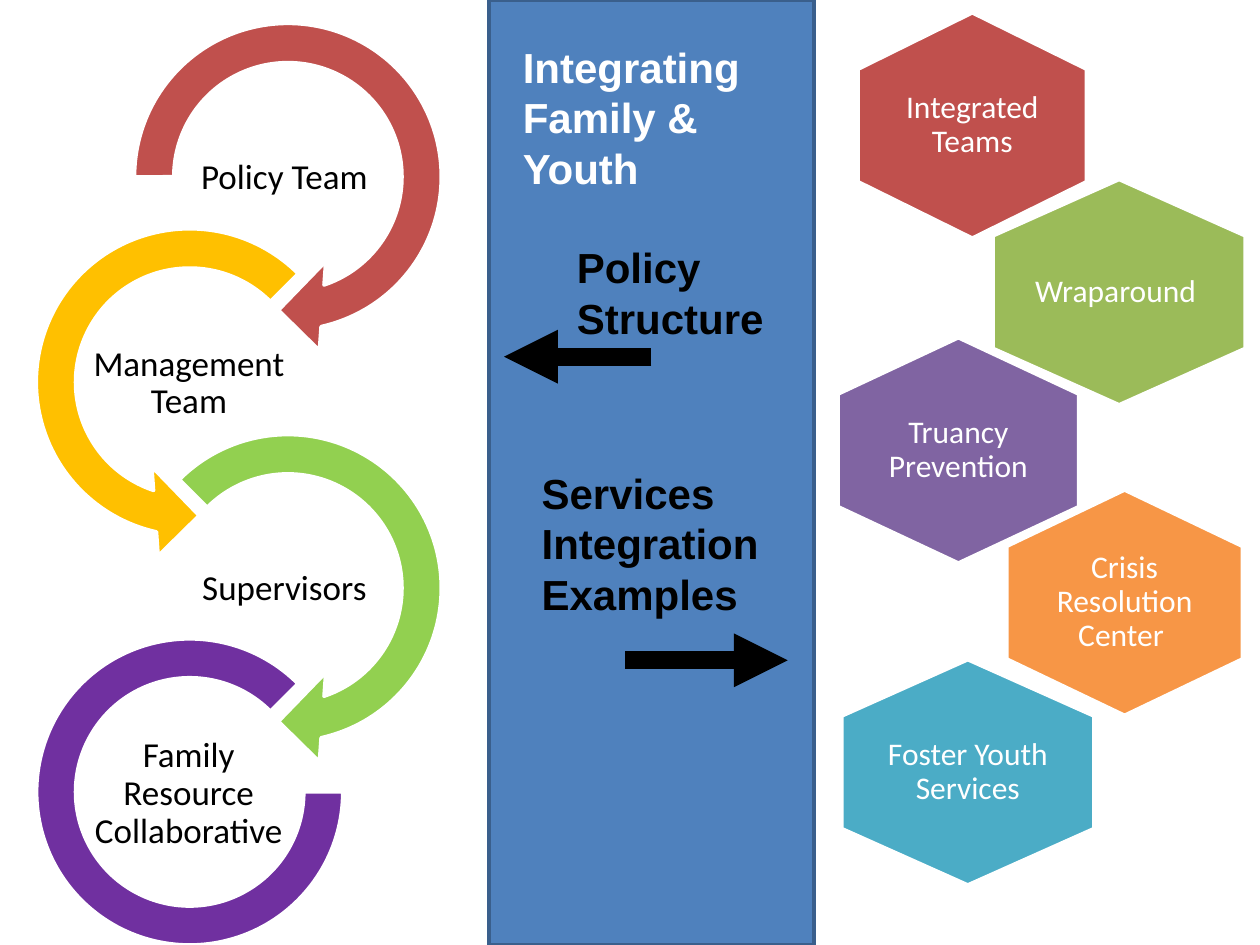
"""Build the slide linking policy structure with service integration examples."""
from lxml import etree
from pptx import Presentation, util as u
from pptx.dml import color
from pptx.enum import shapes, text
from pptx.oxml import ns

Cm, Pt, RGB = u.Cm, u.Pt, color.RGBColor.from_string
M = shapes.MSO_SHAPE
C = {"red": "C0504D", "gold": "FFC000", "lime": "92D050", "violet": "7030A0",
     "blue": "4F81BD", "navy": "3A5F8C", "green": "9BBB59", "purple": "8064A2",
     "teal": "4BACC6", "orange": "F79646", "white": "FFFFFF", "black": "000000"}
LABEL = {"alignment": text.PP_ALIGN.CENTER, "line_spacing": 0.9}


def add_block(parent, kind, box, fill, line="white"):
    s = parent.add_shape(kind, *[Cm(v) for v in box])
    s.shadow.inherit = False
    s.fill.solid()
    s.fill.fore_color.rgb = RGB(C[fill])
    s.line.color.rgb = RGB(C[line])
    s.line.width = Pt(2)
    return s


def add_text(parent, lines, box, font, ink, frame, para):
    s = parent.add_textbox(*[Cm(v) for v in box])
    tf = s.text_frame
    for k, v in {"word_wrap": True, **frame}.items():
        setattr(tf, k, v)
    for i, line in enumerate(lines):
        p = tf.add_paragraph() if i else tf.paragraphs[0]
        for k, v in para.items():
            setattr(p, k, v)
        r = p.add_run()
        r.text = line
        for k, v in font.items():
            setattr(r.font, k, v)
        r.font.color.rgb = RGB(C[ink])


prs = Presentation()
prs.slide_width, prs.slide_height = Cm(25.4), Cm(19.05)
sp = prs.slides.add_slide(prs.slide_layouts[6]).shapes

margins = ("margin_left", "margin_top", "margin_right", "margin_bottom")
middle = {"vertical_anchor": text.MSO_ANCHOR.MIDDLE}

teams = [
    ("Policy Team ", M.CIRCULAR_ARROW, "red", (2.21, -0.03, 7.19),
     (0.11, 11.42, 45, 108, 0.125), (3.81, 2.59, 4.01)),
    ("Management Team", M.LEFT_CIRCULAR_ARROW, "gold", (0.23, 4.11, 7.19),
     (0.11, 11.42, 63, 189, 0.125), (1.42, 6.73, 4.78)),
    ("Supervisors ", M.CIRCULAR_ARROW, "lime", (2.21, 8.26, 7.19),
     (0.11, 11.42, 45, 135, 0.125), (3.81, 10.87, 4.01)),
    ("Family Resource Collaborative", M.BLOCK_ARC, "violet", (0.74, 12.88, 6.17),
     (0, 189, 0.127), (1.8, 15.01, 4.01)),
]
chain = sp.add_group_shape().shapes
frame = {**middle, **dict.fromkeys(margins, Cm(0.03))}
for name, kind, fill, (x, y, size), adjust, label in teams:
    s = add_block(chain, kind, (x, y, size, size), fill)
    for i, v in enumerate(adjust):
        s.adjustments[i] = v
    add_text(chain, [name], (*label, 2.01), {"name": "Calibri", "size": Pt(20)},
             "black", frame, LABEL)

add_block(sp, M.RECTANGLE, (9.86, 0, 6.55, 19.05), "blue", "navy")
headings = [
    (["Policy", "Structure"], "black", (8.84, 4.75, 7.04, 2.31)),
    (["Services Integration", "Examples"], "black", (8.13, 9.3, 7.54, 3.33)),
    (["Integrating Family & Youth"], "white", (7.75, 0.71, 8.66, 2.31)),
]
for lines, ink, box in headings:
    add_text(sp, lines, box, {"name": "Arial", "size": Pt(24), "bold": True},
             ink, {"margin_left": Cm(2.79)}, {})

for x1, x2, y in [(13.13, 10.16, 7.19), (12.6, 15.88, 13.31)]:
    s = sp.add_connector(shapes.MSO_CONNECTOR.STRAIGHT, Cm(x1), Cm(y), Cm(x2), Cm(y))
    s.line.color.rgb = RGB(C["black"])
    s.line.width = Pt(10.25)
    etree.SubElement(s.line._get_or_add_ln(), ns.qn("a:tailEnd"), type="triangle")
    etree.SubElement(s._element.spPr, ns.qn("a:effectLst"))

services = [
    ("Integrated Teams", "red", 19.6, 2.53, 4.6, 0.18),
    ("Wraparound ", "green", 22.56, 5.89, 5.08, 0),
    ("Truancy Prevention", "purple", 19.32, 9.08, 4.85, 0.18),
    ("Foster Youth Services", "teal", 19.51, 15.57, 5.08, 0),
    ("Crisis Resolution Center ", "orange", 22.67, 12.15, 4.75, 0.18),
]
side, label_h = 4.54, 3.02
cluster = sp.add_group_shape().shapes
for name, fill, cx, cy, span, inset in services:
    s = add_block(cluster, M.HEXAGON, (cx - side / 2, cy - span / 2, side, span), fill)
    s.adjustments[0] = 0.25
    s.rotation = 90
    label_w = span * 2 / 3
    add_text(cluster, [name], (cx - label_w / 2, cy - label_h / 2, label_w, label_h),
             {"name": "Calibri", "size": Pt(18)}, "white",
             {**middle, **dict.fromkeys(margins, Cm(inset))}, LABEL)

prs.save("out.pptx")
